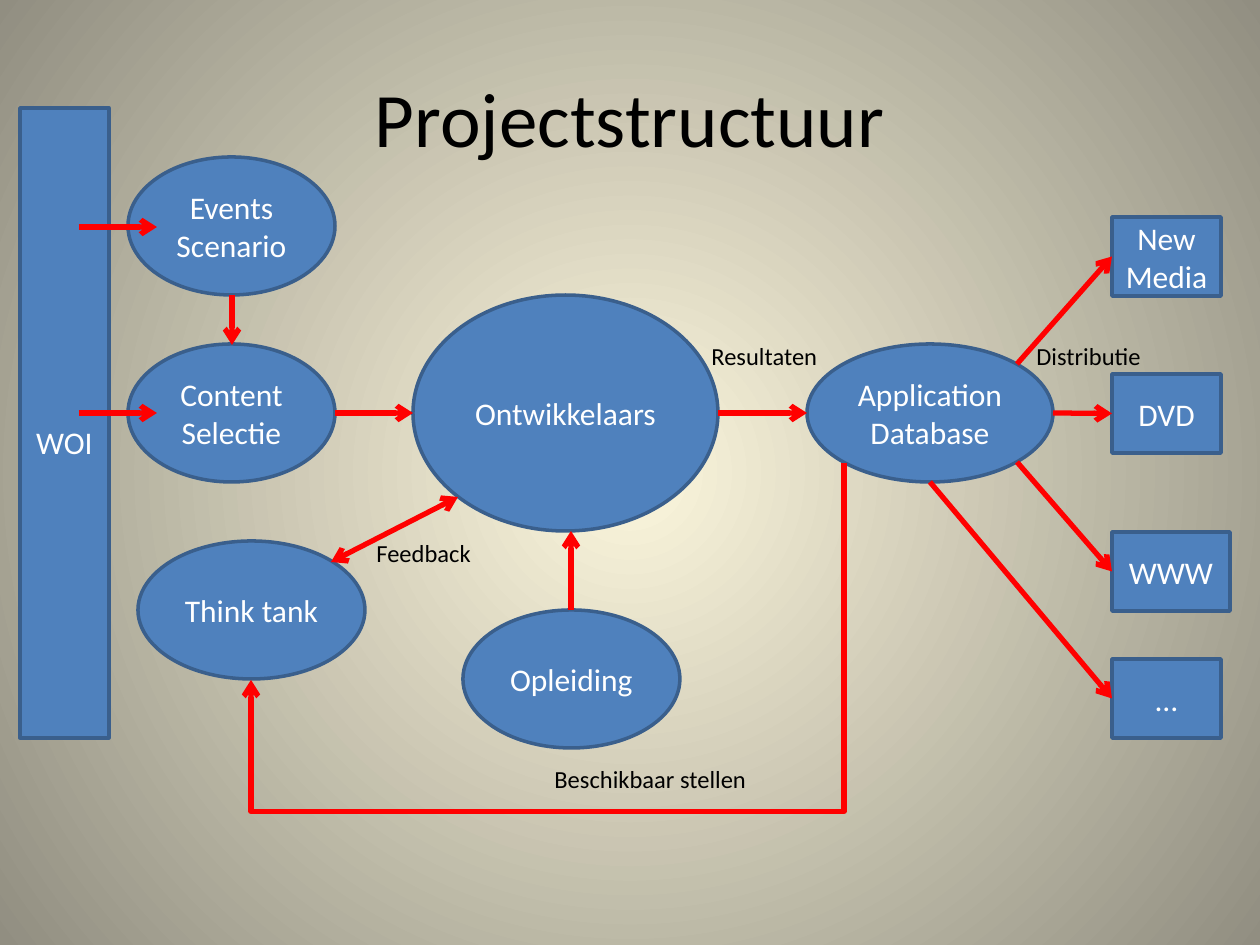
import pptx
import pptx.util
import pptx.dml.color
import pptx.enum.shapes
import pptx.enum.text
import pptx.oxml
import pptx.oxml.ns

PX = 914400 / 126  # EMU per px
THEME = {
    "font": "Calibri", "title": 44, "node": 18, "label": 14,
    "fill": "4F81BD", "edge": "3A5F8C", "arrow": "FF0000",
    "light": "FFFFFF", "dark": "000000", "centre": "FCF7DD", "rim": "918E81",
}
RGB = pptx.dml.color.RGBColor.from_string
qn = pptx.oxml.ns.qn
A = pptx.oxml.ns.nsdecls("a")
SHAPE = pptx.enum.shapes.MSO_SHAPE
CONNECTOR = pptx.enum.shapes.MSO_CONNECTOR


def emu(*lengths):
    return [round(n * PX) for n in lengths]


def write(sp, text, size, color, align):
    sp.text_frame.text = text
    p = sp.text_frame.paragraphs[0]
    p.alignment = align
    p.font.name = THEME["font"]
    p.font.size = pptx.util.Pt(THEME[size])
    p.font.color.rgb = RGB(THEME[color])


LEFT, CENTER = pptx.enum.text.PP_ALIGN.LEFT, pptx.enum.text.PP_ALIGN.CENTER

prs = pptx.Presentation()
prs.slide_width, prs.slide_height = emu(1260, 945)
s = prs.slides.add_slide(prs.slide_layouts[5])

# Background: radial gradient from the centre
fill = s.background.fill
fill.gradient()
for stop, name in zip(fill.gradient_stops, ("centre", "rim")):
    stop.color.rgb = RGB(THEME[name])
    stop.position = 0 if name == "centre" else 1
grad = s.element.find(".//" + qn("a:gradFill"))
grad.replace(grad.find(qn("a:lin")), pptx.oxml.parse_xml(
    f'<a:path {A} path="circle">'
    '<a:fillToRect l="50000" t="50000" r="50000" b="50000"/></a:path>'))

# Title
title = s.shapes.title
title.left, title.top, title.width, title.height = emu(63, 38, 1134, 158)
title.text_frame.vertical_anchor = pptx.enum.text.MSO_ANCHOR.MIDDLE
write(title, "Projectstructuur", "title", "dark", CENTER)

# Nodes: text, shape, left, top, width, height
nodes = {}
for text, kind, *box in (
    ("Events\vScenario", SHAPE.OVAL, 128, 157, 207, 138),
    ("Content Selectie", SHAPE.OVAL, 128, 344, 207, 138),
    ("Think tank", SHAPE.OVAL, 138, 541, 227, 138),
    ("Ontwikkelaars", SHAPE.OVAL, 413, 295, 305, 236),
    ("Opleiding", SHAPE.OVAL, 463, 610, 217, 138),
    ("Application\vDatabase", SHAPE.OVAL, 807, 344, 246, 138),
    ("WOI", SHAPE.RECTANGLE, 20, 108, 89, 630),
    ("New Media", SHAPE.RECTANGLE, 1112, 217, 109, 79),
    ("DVD", SHAPE.RECTANGLE, 1112, 374, 109, 79),
    ("WWW", SHAPE.RECTANGLE, 1112, 532, 118, 79),
    ("…", SHAPE.RECTANGLE, 1112, 659, 109, 79),
):
    sp = s.shapes.add_shape(kind, *emu(*box))
    sp.shadow.inherit = False
    sp.fill.solid()
    sp.fill.fore_color.rgb = RGB(THEME["fill"])
    sp.line.color.rgb = RGB(THEME["edge"])
    sp.line.width = pptx.util.Pt(2)
    sp.text_frame.word_wrap = True
    sp.text_frame.vertical_anchor = pptx.enum.text.MSO_ANCHOR.MIDDLE
    write(sp, text, "node", "light", CENTER)
    nodes[text] = sp
nodes["WOI"].text_frame.margin_top = emu(44)[0]  # label sits below the middle

# Arrows: start, end, and the rectangle whose left side is reached
arrows = [s.shapes.add_connector(CONNECTOR.STRAIGHT, *emu(*ends)) for ends in (
    (331, 562, 458, 497),
    (335, 413, 413, 413),
    (718, 413, 807, 413),
    (571, 610, 571, 531),
    (232, 295, 232, 345),
    (79, 227, 157, 227),
    (79, 413, 157, 413),
)]
feedback = arrows[0]
for x, y, target in (
    (1017, 364, "New Media"),
    (1053, 413, "DVD"),
    (1017, 462, "WWW"),
    (930, 482, "…"),
):
    cx = s.shapes.add_connector(CONNECTOR.STRAIGHT, *emu(x, y, 1112, y))
    cx.end_connect(nodes[target], 1)
    arrows.append(cx)

# Return route: elbow turned a quarter, bending below its end
route = s.shapes.add_connector(CONNECTOR.ELBOW, *emu(439, 275, 656, 868))
route.element.spPr.find(qn("a:xfrm")).set("rot", "5400000")
guides = route.element.spPr.find(qn("a:prstGeom")).get_or_add_avLst()
guides.append(pptx.oxml.parse_xml(f'<a:gd {A} name="adj1" fmla="val 160600"/>'))
arrows.append(route)

for cx in arrows:
    cx.line.color.rgb = RGB(THEME["arrow"])
    cx.line.width = pptx.util.Pt(3)
    ln = cx.element.spPr.find(qn("a:ln"))
    for end in ("headEnd", "tailEnd") if cx is feedback else ("tailEnd",):
        ln.append(pptx.oxml.parse_xml(f'<a:{end} {A} type="arrow"/>'))
    cx.element.spPr.append(pptx.oxml.parse_xml(f"<a:effectLst {A}/>"))

# Labels
for text, *box in (
    ("Feedback", 364, 532, 121, 43),
    ("Resultaten", 699, 335, 132, 43),
    ("Distributie", 1024, 335, 131, 43),
    ("Beschikbaar stellen", 542, 758, 219, 43),
):
    sp = s.shapes.add_textbox(*emu(*box))
    sp.text_frame.word_wrap = False
    sp.text_frame.auto_size = pptx.enum.text.MSO_AUTO_SIZE.SHAPE_TO_FIT_TEXT
    write(sp, text, "label", "dark", LEFT)

prs.save("out.pptx")
